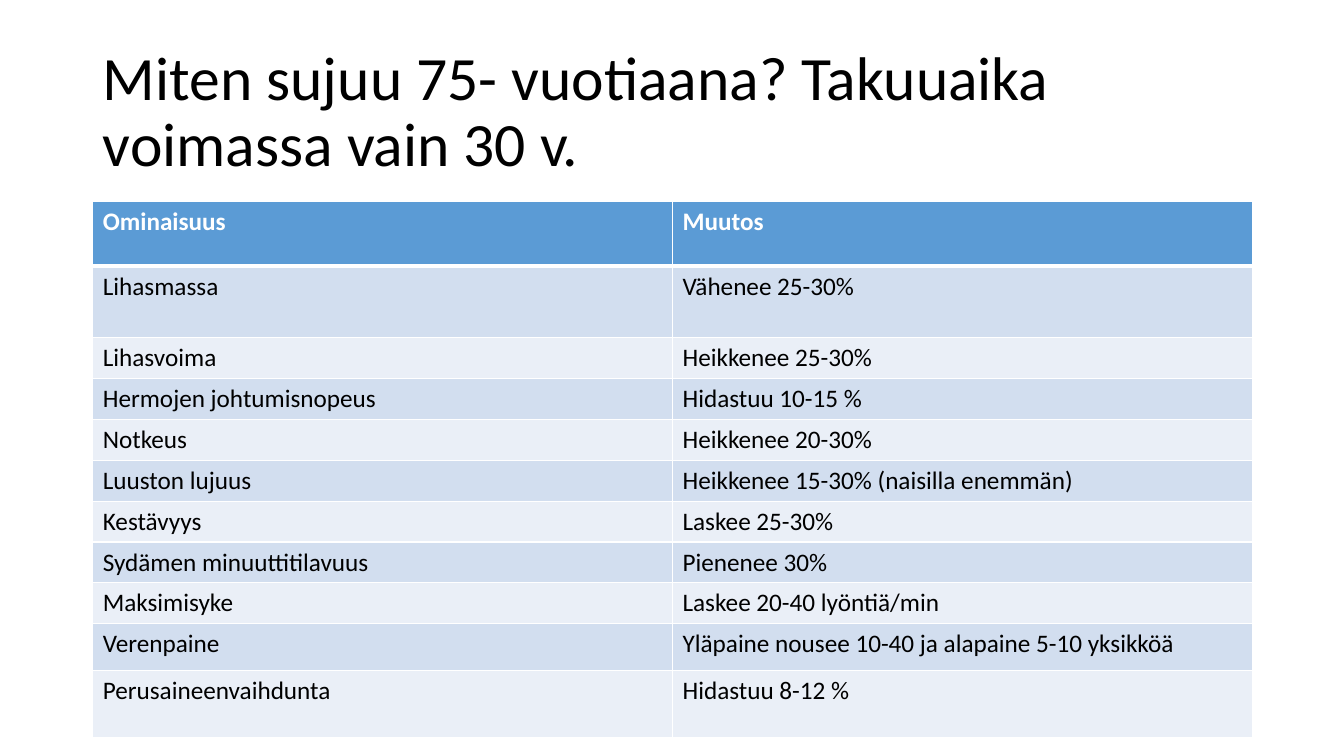
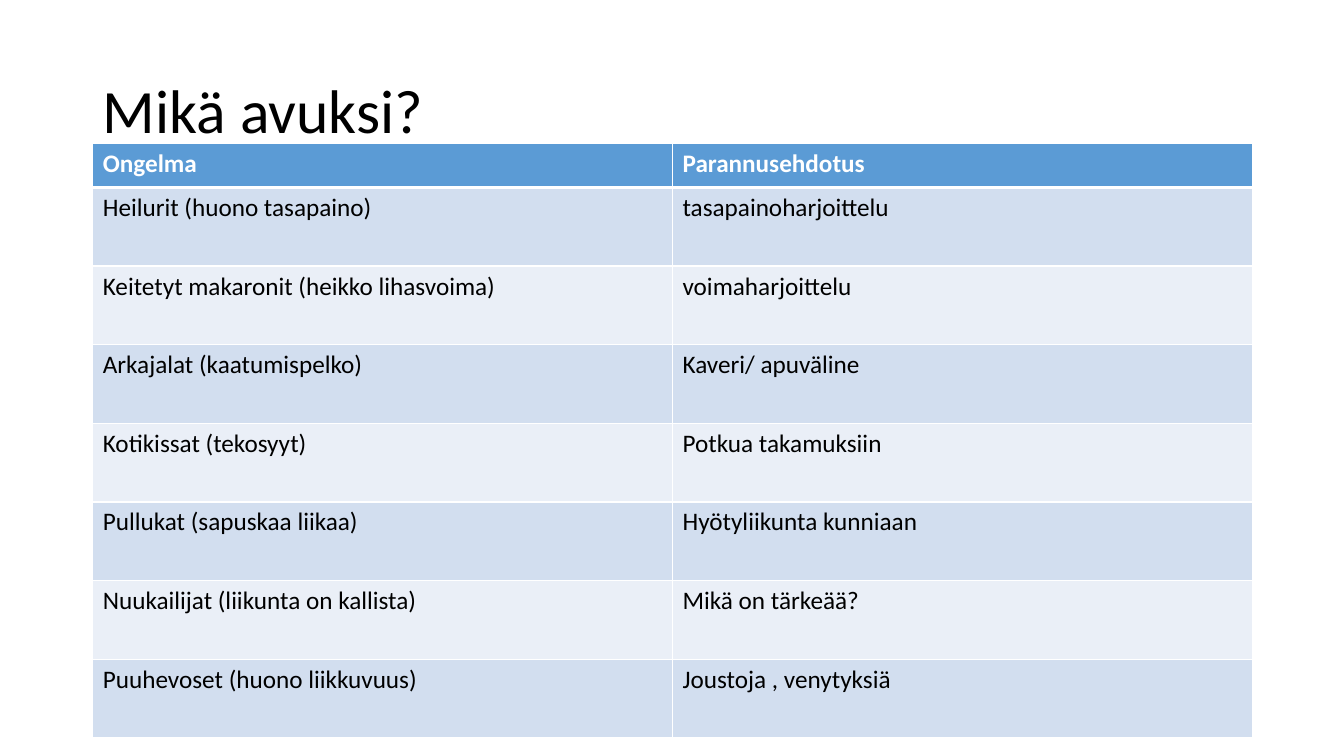
import pptx
import pptx.dml.color
import pptx.enum.text
import pptx.oxml
import pptx.oxml.ns
import pptx.util
from pptx.util import Inches

COLORS = {
    "text": "000000",
    "header_text": "FFFFFF",
    "header": "5B9BD5",
    "odd_row": "D2DEEF",
    "even_row": "EAEFF7",
    "border": "FFFFFF",
}
FONT = "Calibri"
LEFT, WIDTH = 0.92, 11.5
TITLE_BOX = (LEFT, 0.4, WIDTH, 1.45)

CHANGES = [
    ("Ominaisuus", "Muutos"),
    ("Lihasmassa", "Vähenee 25-30%"),
    ("Lihasvoima", "Heikkenee 25-30%"),
    ("Hermojen johtumisnopeus", "Hidastuu 10-15 %"),
    ("Notkeus", "Heikkenee 20-30%"),
    ("Luuston lujuus", "Heikkenee 15-30% (naisilla enemmän)"),
    ("Kestävyys", "Laskee 25-30%"),
    ("Sydämen minuuttitilavuus", "Pienenee 30%"),
    ("Maksimisyke", "Laskee 20-40 lyöntiä/min"),
    ("Verenpaine", "Yläpaine nousee 10-40 ja alapaine 5-10 yksikköä"),
    ("Perusaineenvaihdunta", "Hidastuu 8-12 %"),
]
CHANGE_HEIGHTS = [0.64, 0.71] + [0.4] * 7 + [0.46, 0.67]

REMEDIES = [
    ("Ongelma", "Parannusehdotus"),
    ("Heilurit (huono tasapaino)", "tasapainoharjoittelu"),
    ("Keitetyt makaronit (heikko lihasvoima)", "voimaharjoittelu"),
    ("Arkajalat (kaatumispelko)", "Kaveri/ apuväline"),
    ("Kotikissat (tekosyyt)", "Potkua takamuksiin"),
    ("Pullukat (sapuskaa liikaa)", "Hyötyliikunta kunniaan"),
    ("Nuukailijat (liikunta on kallista)", "Mikä on tärkeää?"),
    ("Puuhevoset (huono liikkuvuus)", "Joustoja , venytyksiä"),
]
REMEDY_HEIGHTS = [0.44] + [0.78] * 7


def rgb(name):
    return pptx.dml.color.RGBColor.from_string(COLORS[name])


def write_text(text_frame, text, size=18, color="text", bold=False, line_spacing=None):
    paragraph = text_frame.paragraphs[0]
    paragraph.alignment = pptx.enum.text.PP_ALIGN.LEFT
    paragraph.line_spacing = line_spacing
    run = paragraph.add_run()
    run.text = text
    run.font.name = FONT
    run.font.size = pptx.util.Pt(size)
    run.font.bold = bold
    run.font.color.rgb = rgb(color)


def add_title(slide, text, box):
    title = slide.shapes.title
    title.left, title.top, title.width, title.height = map(Inches, box)
    text_frame = title.text_frame
    text_frame.word_wrap = True
    text_frame.auto_size = pptx.enum.text.MSO_AUTO_SIZE.NONE
    text_frame.vertical_anchor = pptx.enum.text.MSO_ANCHOR.MIDDLE
    write_text(text_frame, text, size=44, line_spacing=0.9)


def set_borders(cell, top=1, bottom=1):
    """Draw the cell's four edges; widths are in points."""
    properties = cell._tc.get_or_add_tcPr()
    for edge, width in (("L", 1), ("R", 1), ("T", top), ("B", bottom)):
        properties.append(pptx.oxml.parse_xml(
            f'<a:ln{edge} {pptx.oxml.ns.nsdecls("a")} w="{pptx.util.Pt(width)}">'
            f'<a:solidFill><a:srgbClr val="{COLORS["border"]}"/></a:solidFill>'
            f'</a:ln{edge}>'))


def add_banded_table(slide, rows, heights, left, top, width):
    column_count = len(rows[0])
    table = slide.shapes.add_table(
        len(rows), column_count, Inches(left), Inches(top),
        Inches(width), Inches(sum(heights))).table
    table.horz_banding = False
    for column in table.columns:
        column.width = Inches(width / column_count)
    for index, (texts, height) in enumerate(zip(rows, heights)):
        is_header = index == 0
        fill = "header" if is_header else "odd_row" if index % 2 else "even_row"
        table.rows[index].height = Inches(height)
        for cell, text in zip(table.rows[index].cells, texts):
            set_borders(cell, top=3 if index == 1 else 1, bottom=3 if is_header else 1)
            cell.fill.solid()
            cell.fill.fore_color.rgb = rgb(fill)
            write_text(cell.text_frame, text, bold=is_header,
                       color="header_text" if is_header else "text")


def add_table_slide(presentation, title, rows, heights, table_top):
    slide = presentation.slides.add_slide(presentation.slide_layouts.get_by_name("Title Only"))
    add_title(slide, title, TITLE_BOX)
    add_banded_table(slide, rows, heights, LEFT, table_top, WIDTH)


def main():
    presentation = pptx.Presentation()
    presentation.slide_width = Inches(13.33)
    presentation.slide_height = Inches(7.5)
    add_table_slide(presentation, "Miten sujuu 75- vuotiaana? Takuuaika voimassa vain 30 v.",
                    CHANGES, CHANGE_HEIGHTS, table_top=2)
    add_table_slide(presentation, "Mikä avuksi?", REMEDIES, REMEDY_HEIGHTS, table_top=1.42)
    presentation.save("out.pptx")


if __name__ == "__main__":
    main()
